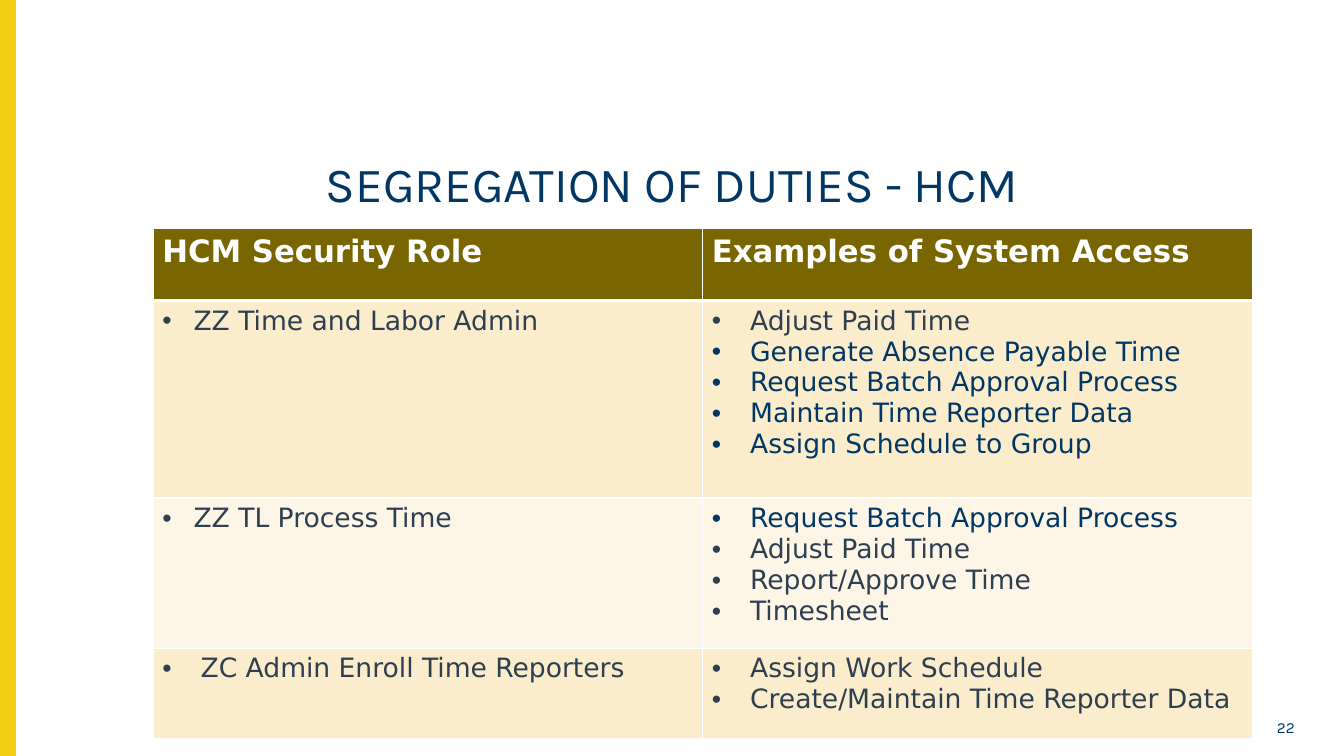
"""Build the slide on segregation of duties in HCM."""
from dataclasses import dataclass

from lxml.etree import SubElement
from pptx import Presentation
from pptx.dml.color import RGBColor
from pptx.enum.shapes import MSO_SHAPE
from pptx.enum.text import MSO_ANCHOR, PP_ALIGN
from pptx.oxml import parse_xml
from pptx.oxml.ns import nsdecls, qn
from pptx.util import Inches, Pt

WIDTH, HEIGHT = 13.33, 7.5


@dataclass(frozen=True)
class Theme:
    navy: str = "003764"
    slate: str = "2D3F50"
    white: str = "FFFFFF"
    yellow: str = "F4CE12"
    olive: str = "7A6600"
    bands: tuple = ("FBEDCC", "FDF6E7")
    heading_font: str = "Karla"
    table_font: str = "DejaVu Sans"
    title_size: int = 35
    header_size: int = 22
    body_size: int = 19
    number_size: int = 11


THEME = Theme()
HEADERS = ("HCM Security Role", "Examples of System Access")
NAVY_ITEMS = {
    "Generate Absence Payable Time",
    "Request Batch Approval Process",
    "Maintain Time Reporter Data",
    "Assign Schedule to Group",
}
ROLES = (
    ("ZZ Time and Labor Admin", 0.31, 1.96,
     ("Adjust Paid Time", "Generate Absence Payable Time",
      "Request Batch Approval Process", "Maintain Time Reporter Data",
      "Assign Schedule to Group")),
    ("ZZ TL Process Time", 0.31, 1.49,
     ("Request Batch Approval Process", "Adjust Paid Time",
      "Report/Approve Time", "Timesheet")),
    ("ZC Admin Enroll Time Reporters", 0.38, 0.9,
     ("Assign Work Schedule", "Create/Maintain Time Reporter Data")),
)
HEADER_HEIGHT = 0.71
COLUMN_WIDTH = 5.45
HANGING = 0.38


def style(paragraph, font, size, color, bold=False):
    paragraph.font.name = font
    paragraph.font.size = Pt(size)
    paragraph.font.bold = bold
    paragraph.font.color.rgb = RGBColor.from_string(color)


def add_bullet(paragraph, indent):
    properties = paragraph._p.get_or_add_pPr()
    properties.set("marL", str(Inches(indent)))
    properties.set("indent", str(-Inches(HANGING)))
    SubElement(properties, qn("a:buFont"), typeface="Arial")
    SubElement(properties, qn("a:buChar"), char="•")


def set_borders(cell, top, bottom):
    widths = {"lnL": 1, "lnR": 1, "lnT": top, "lnB": bottom}
    for position, (side, points) in enumerate(widths.items()):
        border = parse_xml(
            f'<a:{side} {nsdecls("a")} w="{Pt(points)}"><a:solidFill>'
            f'<a:srgbClr val="{THEME.white}"/></a:solidFill></a:{side}>')
        cell._tc.get_or_add_tcPr().insert(position, border)


def format_cell(cell, fill, top=1, bottom=1):
    cell.margin_left = cell.margin_right = Inches(0.09)
    cell.margin_top = cell.margin_bottom = Inches(0.05)
    cell.fill.solid()
    cell.fill.fore_color.rgb = RGBColor.from_string(fill)
    set_borders(cell, top, bottom)


def fill_list(cell, items, indent):
    cell.text = "\n".join(items)
    for paragraph, item in zip(cell.text_frame.paragraphs, items):
        add_bullet(paragraph, indent)
        color = THEME.navy if item in NAVY_ITEMS else THEME.slate
        style(paragraph, THEME.table_font, THEME.body_size, color)


def add_side_bar(slide):
    bar = slide.shapes.add_shape(
        MSO_SHAPE.RECTANGLE, 0, 0, Inches(0.15), Inches(HEIGHT))
    bar.shadow.inherit = False
    bar.fill.solid()
    bar.fill.fore_color.rgb = RGBColor.from_string(THEME.yellow)
    bar.line.color.rgb = RGBColor.from_string(THEME.yellow)
    bar.line.width = Pt(1)


def add_title(slide, text):
    title = slide.shapes.title
    title.left, title.top = Inches(0.59), Inches(1.54)
    title.width, title.height = Inches(12.16), Inches(0.87)
    title.text_frame.text = text
    title.text_frame.vertical_anchor = MSO_ANCHOR.TOP
    heading = title.text_frame.paragraphs[0]
    heading.alignment = PP_ALIGN.CENTER
    heading.line_spacing = 0.9
    style(heading, THEME.heading_font, THEME.title_size, THEME.navy)


def add_role_table(slide):
    heights = [HEADER_HEIGHT] + [height for _, _, height, _ in ROLES]
    table = slide.shapes.add_table(
        len(heights), len(HEADERS), Inches(1.52), Inches(2.27),
        Inches(COLUMN_WIDTH * len(HEADERS)), Inches(sum(heights))).table
    for column in table.columns:
        column.width = Inches(COLUMN_WIDTH)
    for row, height in zip(table.rows, heights):
        row.height = Inches(height)
    for column, header in enumerate(HEADERS):
        cell = table.cell(0, column)
        cell.text = header
        format_cell(cell, THEME.olive, bottom=3)
        style(cell.text_frame.paragraphs[0], THEME.table_font,
              THEME.header_size, THEME.white, bold=True)
    for row, (role, indent, _, access) in enumerate(ROLES, start=1):
        contents = (((role,), indent), (access, HANGING))
        for column, (items, item_indent) in enumerate(contents):
            cell = table.cell(row, column)
            format_cell(cell, THEME.bands[(row - 1) % 2],
                        top=3 if row == 1 else 1)
            fill_list(cell, items, item_indent)


def add_page_number(slide, number):
    frame = slide.shapes.add_textbox(
        Inches(12.26), Inches(7.09), Inches(0.68), Inches(0.26)).text_frame
    frame.word_wrap = True
    frame.vertical_anchor = MSO_ANCHOR.MIDDLE
    frame.text = number
    frame.paragraphs[0].alignment = PP_ALIGN.RIGHT
    style(frame.paragraphs[0], THEME.heading_font, THEME.number_size, THEME.navy)


def main():
    deck = Presentation()
    deck.slide_width, deck.slide_height = Inches(WIDTH), Inches(HEIGHT)
    slide = deck.slides.add_slide(deck.slide_layouts[5])
    add_side_bar(slide)
    add_title(slide, "SEGREGATION OF DUTIES - HCM")
    add_role_table(slide)
    add_page_number(slide, "22")
    deck.save("out.pptx")


if __name__ == "__main__":
    main()
